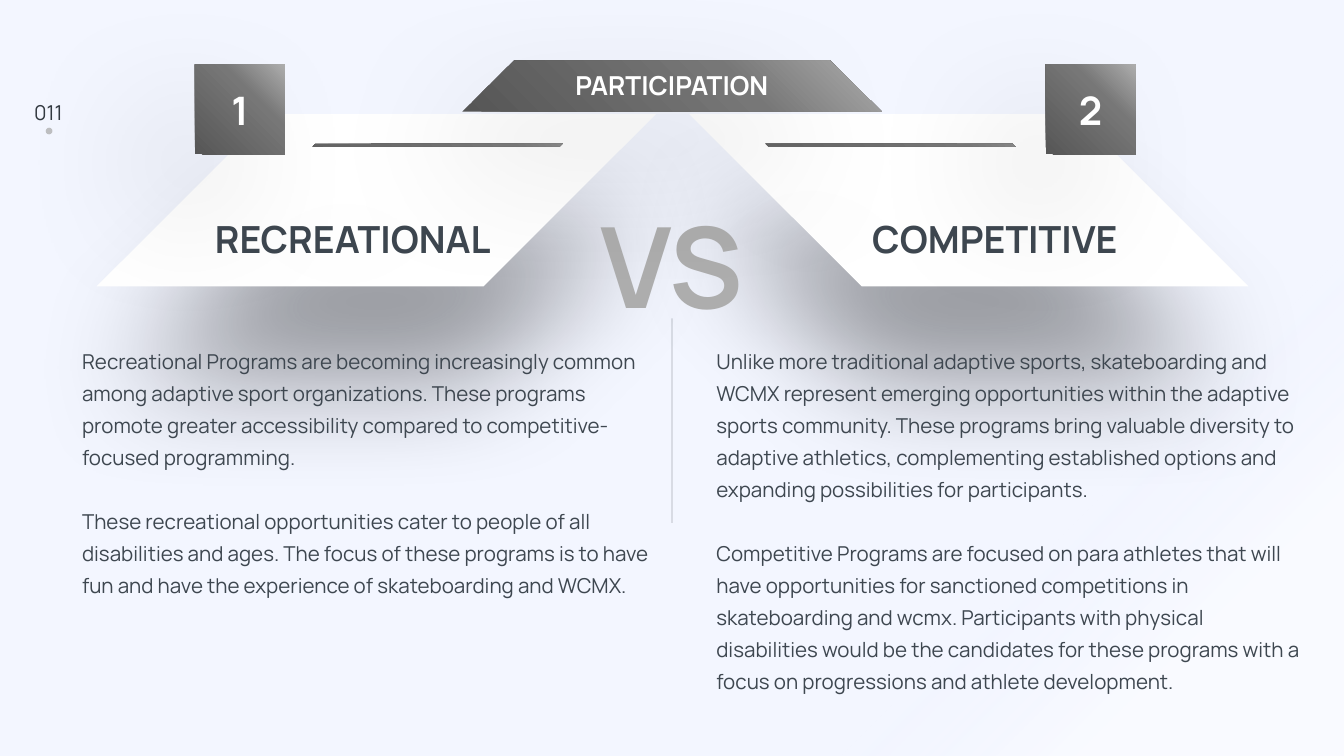
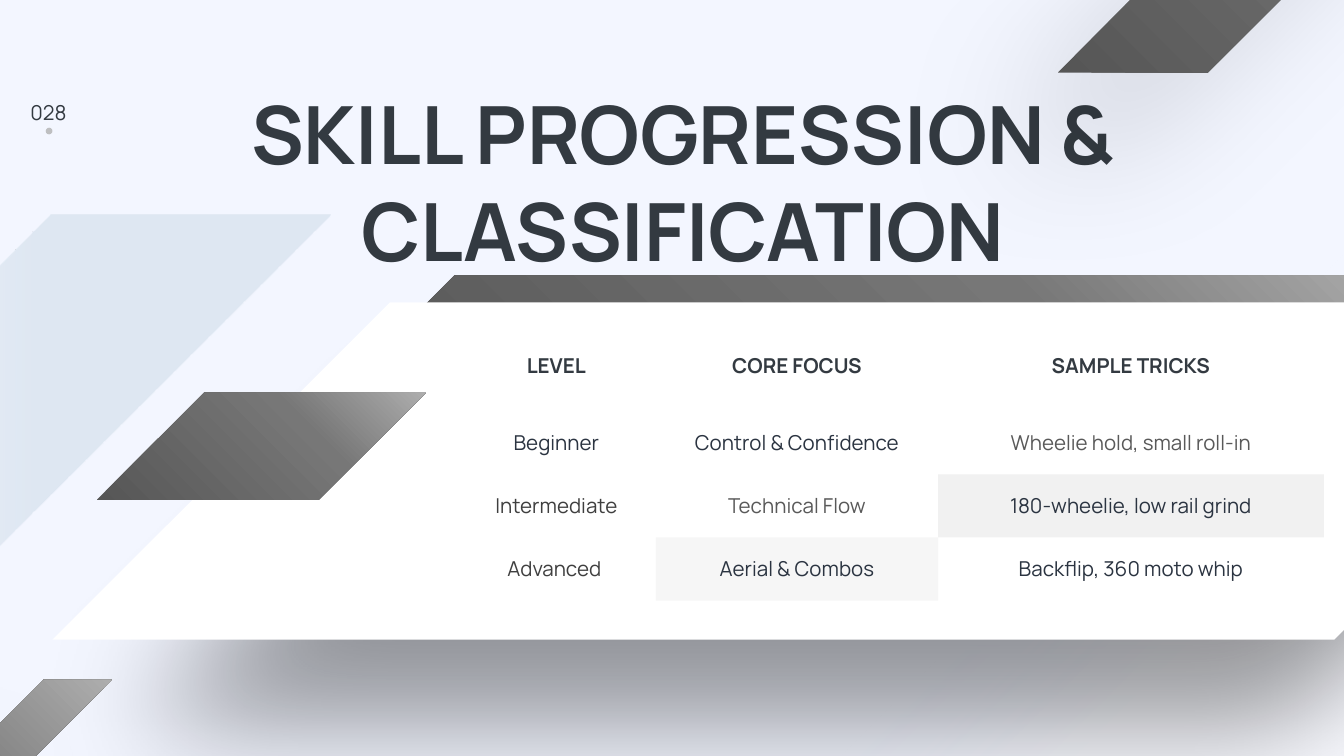
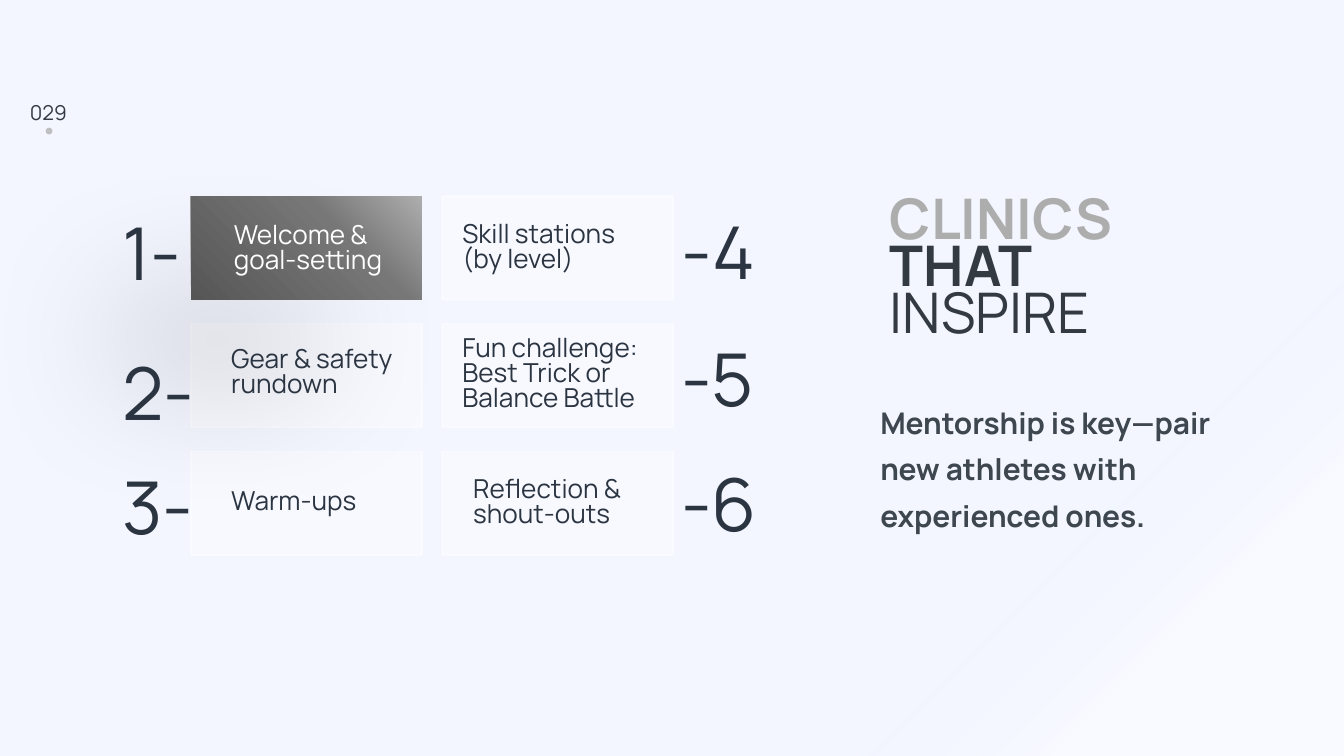
from dataclasses import dataclass
from typing import NamedTuple, Optional

from pptx import Presentation
from pptx.dml.color import RGBColor
from pptx.enum.shapes import MSO_CONNECTOR, MSO_SHAPE as SHAPE
from pptx.enum.text import MSO_ANCHOR, MSO_AUTO_SIZE, PP_ALIGN
from pptx.oxml import parse_xml
from pptx.oxml.ns import nsdecls, qn
from pptx.util import Inches, Pt

FONT = "Manrope"
COLORS = {
    "white": "FFFFFF", "page": "F3F6FF", "mist": "DEE7F2",
    "silver": "ADADAD", "gray": "777777", "charcoal": "565656",
    "ink": "333A41", "slate": "3E4750", "navy": "2B3441",
    "dim": "595959", "soft": "3F3F3F", "black": "000000",
}
NO_GRID_STYLE = "{2D5ABB26-0587-4C30-8999-92F81FD0307C}"
SLANT = 1.001


class Box(NamedTuple):
    x: float
    y: float
    w: float
    h: float

    def emu(self) -> list:
        return [Inches(v) for v in self]


class Stop(NamedTuple):
    pos: int
    color: str
    alpha: int = 100


class Gradient(NamedTuple):
    stops: tuple
    focus: Optional[str] = None  # corner of a circular gradient
    angle: int = 0


class Solid(NamedTuple):
    color: str
    alpha: int = 100


class Shadow(NamedTuple):
    alpha: int
    blur: int
    dist: int
    angle: int


class Run(NamedTuple):
    text: str
    color: str
    bold: bool = False


@dataclass(frozen=True)
class Style:
    size: int
    spacing: Optional[float] = None
    align: PP_ALIGN = PP_ALIGN.LEFT
    gap: int = 0


@dataclass(frozen=True)
class Side:
    number: str
    name: str
    panel_x: float
    name_x: float
    badge_x: float
    stripe_x: float
    stripe_rotation: int
    mirrored: bool
    body: Box
    paragraphs: tuple


@dataclass(frozen=True)
class Card:
    col: int
    row: int
    label: str
    label_box: Box
    number: str
    number_y: float


FOCUS = {
    "top_right": 'l="100000" b="100000"',
    "bottom_right": 'l="100000" t="100000"',
    "top_left": 'r="100000" b="100000"',
}


def fade(color: str, hold: int, alpha: int = 100, focus: str = "bottom_right") -> Gradient:
    return Gradient((Stop(0, color, alpha), Stop(hold, color, alpha),
                     Stop(50, "page", 0), Stop(100, "page", 0)), focus)


METAL = Gradient((Stop(0, "silver"), Stop(35, "gray"), Stop(100, "charcoal")), "top_right")
MIST = Gradient((Stop(0, "mist"), Stop(35, "mist"), Stop(100, "page", 0)), angle=180)
WHITE = Solid("white")
PANEL_SHADOW = Shadow(40, 64, 54, 90)
BADGE_SHADOW = Shadow(14, 75, 40, 135)
SLAB_SHADOW = Shadow(14, 75, 68, 135)

CENTER = PP_ALIGN.CENTER
BODY = Style(11, 1.3, gap=17)
SMALL = Style(11, align=CENTER)

BACKDROP = [
    (Box(0, -0.93, 6.55, 6.55), 90, fade("white", 30)),
    (Box(0, -0.93, 6.55, 6.55), 270, fade("mist", 35, focus="top_left")),
    (Box(5.64, 1.87, 4.36, 4.36), 270, fade("white", 30, 50)),
    (Box(0, 0, 1.11, 1.11), 90, fade("mist", 30, 50)),
]

SIDES = [
    Side("1", "RECREATIONAL", 0.72, 1.53, 1.45, 2.59, 315, False, Box(0.54, 2.5, 4.52, 2.19), (
        "Recreational Programs are becoming increasingly common among adaptive sport "
        "organizations. These programs promote greater accessibility compared to "
        "competitive-focused programming.",
        "These recreational opportunities cater to people of all disabilities and ages. "
        "The focus of these programs is to have fun and have the experience of "
        "skateboarding and WCMX.")),
    Side("2", "COMPETITIVE", 5.13, 6.42, 7.78, 5.96, 45, True, Box(5.26, 2.5, 4.52, 2.91), (
        "Unlike more traditional adaptive sports, skateboarding and WCMX represent emerging "
        "opportunities within the adaptive sports community. These programs bring valuable "
        "diversity to adaptive athletics, complementing established options and expanding "
        "possibilities for participants.",
        "Competitive Programs are focused on para athletes that will have opportunities for "
        "sanctioned competitions in skateboarding and wcmx. Participants with physical "
        "disabilities would be the candidates for these programs with a focus on "
        "progressions and athlete development.")),
]

LEVELS = [
    [Run("LEVEL", "ink", True), Run("CORE FOCUS", "ink", True), Run("SAMPLE TRICKS", "ink", True)],
    [Run("Beginner", "navy"), Run("Control & Confidence", "navy"),
     Run("Wheelie hold, small roll‑in", "dim")],
    [Run("Intermediate", "soft"), Run("Technical Flow", "dim"),
     Run("180‑wheelie, low rail grind", "navy")],
    [Run("Advanced ", "soft"), Run("Aerial & Combos", "navy"),
     Run("Backflip, 360 moto whip", "navy")],
]
CELL_FILLS = {(2, 2): Solid("gray", 10), (3, 1): Solid("silver", 10)}

CARDS = [
    Card(0, 0, "Welcome & goal‑setting", Box(1.67, 1.63, 1.48, 0.45), "1-", 1.63),
    Card(0, 1, "Gear & safety rundown", Box(1.65, 2.55, 1.41, 0.64), "2-", 2.67),
    Card(0, 2, "Warm‑ups", Box(1.65, 3.61, 1.41, 0.26), "3-", 3.52),
    Card(1, 0, "Skill stations (by level)", Box(3.37, 1.62, 1.57, 0.45), "-4", 1.62),
    Card(1, 1, "Fun challenge: Best Trick or Balance Battle",
         Box(3.37, 2.47, 1.57, 0.64), "-5", 2.57),
    Card(1, 2, "Reflection & shout‑outs", Box(3.45, 3.52, 1.48, 0.45), "-6", 3.5),
]


def color_xml(color: str, alpha: int) -> str:
    return f'<a:srgbClr val="{COLORS[color]}"><a:alpha val="{alpha * 1000}"/></a:srgbClr>'


def fill_element(fill):
    if isinstance(fill, Solid):
        return parse_xml(f'<a:solidFill {nsdecls("a")}>{color_xml(*fill)}</a:solidFill>')
    stops = "".join(f'<a:gs pos="{st.pos * 1000}">{color_xml(st.color, st.alpha)}</a:gs>'
                    for st in fill.stops)
    if fill.focus:
        shade = f'<a:path path="circle"><a:fillToRect {FOCUS[fill.focus]}/></a:path>'
    else:
        shade = f'<a:lin ang="{fill.angle * 60000}" scaled="0"/>'
    return parse_xml(f'<a:gradFill {nsdecls("a")} rotWithShape="1">'
                     f'<a:gsLst>{stops}</a:gsLst>{shade}</a:gradFill>')


def set_fill(owner, props, fill) -> None:
    """Fill a shape or cell whose fill lives in the given properties element."""
    owner.fill.background()
    props.replace(props.find(qn("a:noFill")), fill_element(fill))


def set_line(line, color: str, alpha: int) -> None:
    line.color.rgb = RGBColor.from_string(COLORS[color])
    line.width = Pt(1)
    clr = line._get_or_add_ln().find(qn("a:solidFill"))[0]
    clr.append(parse_xml(f'<a:alpha {nsdecls("a")} val="{alpha * 1000}"/>'))


def add_shape(s, kind: SHAPE, box: Box, fill, shadow: Optional[Shadow] = None,
              rotation: int = 0, adj: Optional[float] = None, flip: bool = False):
    sp = s.shapes.add_shape(kind, *box.emu())
    sp.rotation = rotation
    if adj is not None:
        sp.adjustments[0] = adj
    props = sp._element.spPr
    if flip:
        props.find(qn("a:xfrm")).set("flipH", "1")
    set_fill(sp, props, fill)
    sp.line.fill.background()
    sp.shadow.inherit = False
    if shadow:
        props.find(qn("a:effectLst")).append(parse_xml(
            f'<a:outerShdw {nsdecls("a")} blurRad="{Pt(shadow.blur)}" dist="{Pt(shadow.dist)}" '
            f'dir="{shadow.angle * 60000}" sx="90000" sy="90000" algn="ctr" rotWithShape="0">'
            f'{color_xml("black", shadow.alpha)}</a:outerShdw>'))
    return sp


def add_slab(s, box: Box, fill=METAL, shadow: Optional[Shadow] = None,
             rotation: int = 0, flip: bool = False) -> None:
    add_shape(s, SHAPE.PARALLELOGRAM, box, fill, shadow, rotation, SLANT, flip)


def write(tf, paragraphs: list, style: Style) -> None:
    for i, runs in enumerate(paragraphs):
        p = tf.add_paragraph() if i else tf.paragraphs[0]
        p.alignment = style.align
        if style.spacing:
            p.line_spacing = style.spacing
        if i:
            p.space_before = Pt(style.gap)
        for run in runs:
            r = p.add_run()
            r.text = run.text
            r.font.name = FONT
            r.font.size = Pt(style.size)
            r.font.bold = run.bold
            r.font.color.rgb = RGBColor.from_string(COLORS[run.color])


def format_frame(tf) -> None:
    tf.word_wrap = True
    tf.auto_size = MSO_AUTO_SIZE.SHAPE_TO_FIT_TEXT
    tf.vertical_anchor = MSO_ANCHOR.TOP
    tf.margin_left = tf.margin_right = Inches(0.07)
    tf.margin_top = tf.margin_bottom = Inches(0.04)


def add_text(s, box: Box, style: Style, *paragraphs: list) -> None:
    tf = s.shapes.add_textbox(*box.emu()).text_frame
    format_frame(tf)
    write(tf, paragraphs, style)


def set_title(s, box: Box, style: Style, *runs: Run) -> None:
    """Place the title in front of everything drawn so far."""
    title = s.shapes.title
    title.left, title.top, title.width, title.height = box.emu()
    format_frame(title.text_frame)
    write(title.text_frame, [runs], style)
    s.shapes._spTree.append(title._element)


def new_slide(prs, number: str):
    s = prs.slides.add_slide(prs.slide_layouts[5])
    s.background.fill.solid()
    s.background.fill.fore_color.rgb = RGBColor.from_string(COLORS["page"])
    for box, rotation, fill in BACKDROP:
        add_shape(s, SHAPE.RIGHT_TRIANGLE, box, fill, rotation=rotation)
    add_text(s, Box(0, 0.7, 0.72, 0.25), SMALL, [Run(number, "ink")])
    add_shape(s, SHAPE.OVAL, Box(0.34, 0.95, 0.05, 0.05), Solid("silver", 75))
    return s


def add_divider(s) -> None:
    line = s.shapes.add_connector(MSO_CONNECTOR.STRAIGHT, Inches(5), Inches(3.89),
                                  Inches(5), Inches(2.37))
    set_line(line.line, "slate", 15)
    line._element.spPr.append(parse_xml(f'<a:effectLst {nsdecls("a")}/>'))


def participation_slide(prs) -> None:
    s = new_slide(prs, "011")
    for side in SIDES:
        add_slab(s, Box(side.panel_x, 0.85, 4.16, 1.28), WHITE, PANEL_SHADOW, flip=side.mirrored)
        add_text(s, Box(side.name_x, 1.47, 2.34, 0.41), Style(20, 1.3),
                 [Run(side.name, "slate", True)])
    add_divider(s)
    for side in SIDES:
        add_shape(s, SHAPE.RECTANGLE, Box(side.badge_x, 0.48, 0.67, 0.67), METAL, BADGE_SHADOW)
        add_text(s, Box(side.badge_x, 0.6, 0.67, 0.43), Style(21, align=CENTER),
                 [Run(side.number, "white", True)])
    add_text(s, Box(4.36, 1.42, 1.28, 1.09), Style(60, align=CENTER), [Run("VS", "silver", True)])
    add_shape(s, SHAPE.TRAPEZOID, Box(3.44, 0.45, 3.12, 0.38), METAL, BADGE_SHADOW, adj=1.014)
    set_title(s, Box(3.7, 0.5, 2.6, 0.29), Style(14, 0.9, CENTER),
              Run("PARTICIPATION", "white", True))
    for side in SIDES:
        add_slab(s, Box(side.stripe_x, 0.43, 1.33, 1.3), METAL, SLAB_SHADOW,
                 side.stripe_rotation, not side.mirrored)
        add_text(s, side.body, BODY, *[[Run(text, "slate")] for text in side.paragraphs])


def add_levels_table(s) -> None:
    widths, heights = (1.48, 2.1, 2.87), (0.68, 0.47, 0.47, 0.47)
    box = Box(3.4, 2.38, sum(widths), sum(heights))
    table = s.shapes.add_table(len(heights), len(widths), *box.emu()).table
    table.first_row = table.horz_banding = False
    table._tbl.tblPr.find(qn("a:tableStyleId")).text = NO_GRID_STYLE
    for column, width in zip(table.columns, widths):
        column.width = Inches(width)
    for row, height in zip(table.rows, heights):
        row.height = Inches(height)
    for i, runs in enumerate(LEVELS):
        for j, run in enumerate(runs):
            cell = table.cell(i, j)
            cell.vertical_anchor = MSO_ANCHOR.MIDDLE
            cell.margin_left = cell.margin_right = Inches(0.12)
            cell.margin_top = cell.margin_bottom = Inches(0.06)
            write(cell.text_frame, [[run]], SMALL)
            cell.fill.background()
            if (i, j) in CELL_FILLS:
                set_fill(cell, cell._tc.tcPr, CELL_FILLS[i, j])


def progression_slide(prs) -> None:
    s = new_slide(prs, "028")
    add_slab(s, Box(2.58, 2.05, 7.95, 0.8))
    add_slab(s, Box(0.39, 2.25, 12.05, 2.51), WHITE, PANEL_SHADOW)
    add_levels_table(s)
    add_slab(s, Box(0.72, 2.92, 2.45, 0.8))
    set_title(s, Box(0.72, 0.59, 8.72, 1.52), Style(43, align=CENTER),
              Run("SKILL PROGRESSION & CLASSIFICATION", "ink", True))
    add_slab(s, Box(7.87, -2, 3.66, 2.54), shadow=SLAB_SHADOW)
    add_slab(s, Box(-2.22, 5.06, 3.05, 2.54), shadow=SLAB_SHADOW)
    add_slab(s, Box(-3.66, 1.6, 6.12, 4.03), MIST)


def clinics_slide(prs) -> None:
    s = new_slide(prs, "029")
    # The highlighted first card goes last so its shadow falls over the others.
    for card in reversed(CARDS):
        box = Box(1.42 + 1.87 * card.col, 1.46 + 0.95 * card.row, 1.72, 0.77)
        if card is CARDS[0]:
            add_shape(s, SHAPE.RECTANGLE, box, METAL, SLAB_SHADOW)
        else:
            sp = add_shape(s, SHAPE.RECTANGLE, box, Solid("white", 40))
            set_line(sp.line, "white", 50)
    for card in CARDS:
        color = "white" if card is CARDS[0] else "navy"
        add_text(s, card.label_box, Style(14, 0.8), [Run(card.label, color)])
        add_text(s, Box((0.84, 5)[card.col], card.number_y, 1.57, 0.6), Style(39, 0.8),
                 [Run(card.number, "navy")])
    set_title(s, Box(6.55, 1.46, 2.71, 1.14), Style(30, 0.7), Run("CLINICS ", "silver", True),
              Run("THAT ", "ink", True), Run("INSPIRE", "ink"))
    add_text(s, Box(6.48, 2.89, 2.87, 1.05), Style(16, 1.3),
             [Run("Mentorship is key—pair new athletes with experienced ones.", "slate", True)])


def main() -> None:
    prs = Presentation()
    prs.slide_width = Inches(10)
    prs.slide_height = prs.slide_width * 9 // 16
    participation_slide(prs)
    progression_slide(prs)
    clinics_slide(prs)
    prs.save("out.pptx")


if __name__ == "__main__":
    main()
